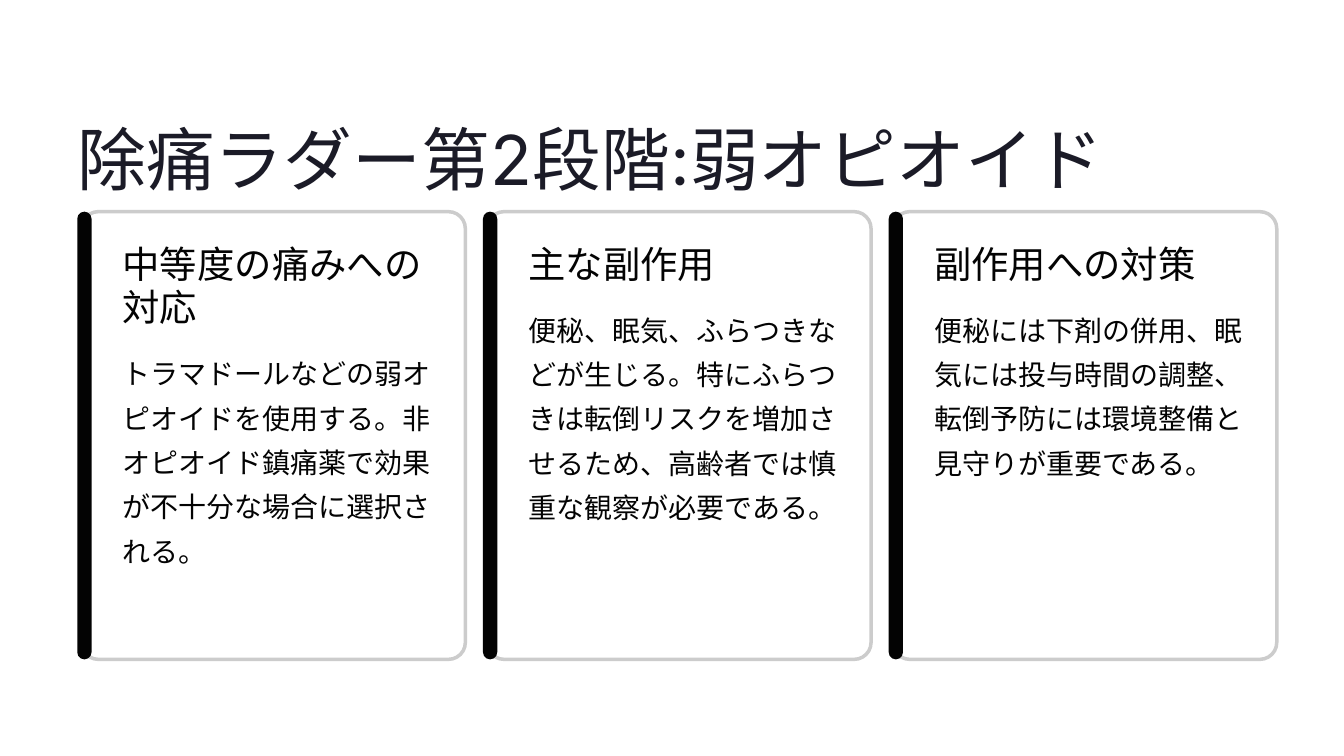
from lxml import etree
from pptx import Presentation
from pptx.dml.color import RGBColor
from pptx.enum.shapes import MSO_SHAPE
from pptx.oxml.ns import qn
from pptx.util import Inches, Pt

ROUND = MSO_SHAPE.ROUNDED_RECTANGLE
INK = "030303"

deck = Presentation()
deck.slide_width, deck.slide_height = Inches(16), Inches(9)
slide = deck.slides.add_slide(deck.slide_layouts[6])


def color(code):
    return RGBColor.from_string(code)


def write(text, left, top, width, height, size, lead, font="Inter", ink=INK):
    box = slide.shapes.add_textbox(Inches(left), Inches(top), Inches(width), Inches(height))
    frame = box.text_frame
    frame.word_wrap = True
    frame.margin_left = frame.margin_right = frame.margin_top = frame.margin_bottom = 0
    para = frame.paragraphs[0]
    para.line_spacing = Pt(lead)
    run = para.add_run()
    run.text = text
    run.font.size = Pt(size)
    run.font.name = font
    run.font.color.rgb = color(ink)


write("除痛ラダー第2段階:弱オピオイド", 0.92, 1.34, 14.2, 1.03, 59, 74, ink="1B1B27")

cards = [
    ("中等度の痛みへの対応", 2,
     "トラマドールなどの弱オピオイドを使用する。非オピオイド鎮痛薬で効果が不十分な場合に選択される。"),
    ("主な副作用", 1,
     "便秘、眠気、ふらつきなどが生じる。特にふらつきは転倒リスクを増加させるため、高齢者では慎重な観察が必要である。"),
    ("副作用への対策", 1,
     "便秘には下剤の併用、眠気には投与時間の調整、転倒予防には環境整備と見守りが重要である。"),
]

for index, (head, rows, body) in enumerate(cards):
    left = 0.92 + 4.83 * index

    card = slide.shapes.add_shape(ROUND, Inches(left + 0.05), Inches(2.52), Inches(4.57), Inches(5.33))
    card.shadow.inherit = False
    card.adjustments[0] = 0.044
    card.fill.solid()
    card.fill.fore_color.rgb = color("FFFFFF")
    tint = card.element.spPr.find(qn("a:solidFill"))[0]
    etree.SubElement(tint, qn("a:alpha")).set("val", "95000")
    card.line.color.rgb = color("CCCCCC")
    card.line.width = Pt(3)

    bar = slide.shapes.add_shape(ROUND, Inches(left), Inches(2.52), Inches(0.17), Inches(5.33))
    bar.shadow.inherit = False
    bar.adjustments[0] = 0.5
    bar.fill.solid()
    bar.fill.fore_color.rgb = color(INK)
    bar.line.fill.background()

    write(head, left + 0.54, 2.89, 3.69, 0.59 * rows, 32, 37)
    write(body, left + 0.54, 3.08 + 0.52 * rows, 3.69, 3.04, 24, 38, font="Karla")

deck.save("out.pptx")
